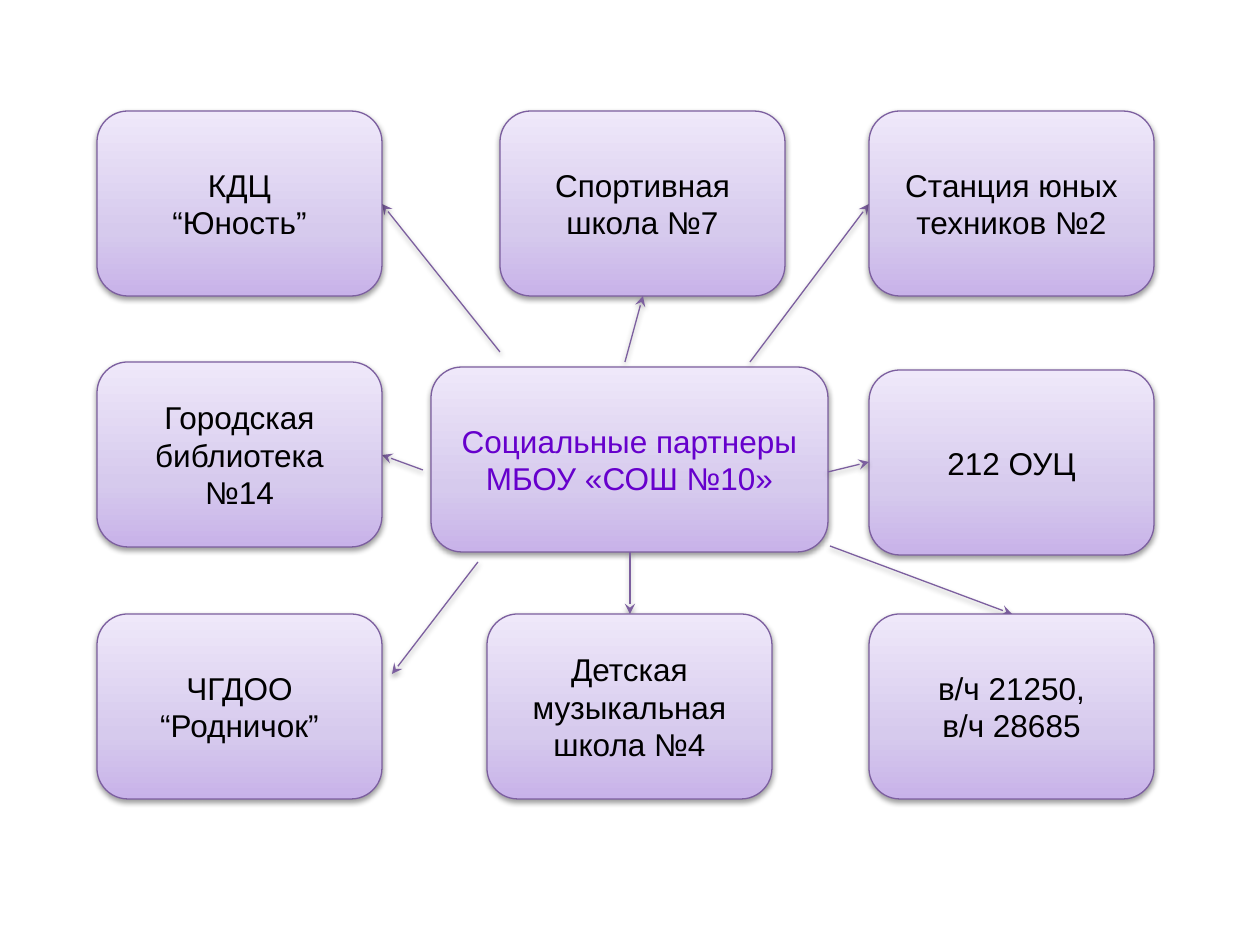
from lxml.etree import SubElement
from pptx import Presentation
from pptx.dml.color import RGBColor
from pptx.enum.shapes import MSO_CONNECTOR, MSO_SHAPE
from pptx.enum.text import MSO_ANCHOR, PP_ALIGN
from pptx.oxml.ns import qn
from pptx.util import Pt

PX = 914400 // 126
BOX_WIDTH, BOX_HEIGHT = 285, 185
LEFT, RIGHT = 97, 869
TOP, BOTTOM = 111, 614
OUTLINE = "7C5F9F"
GRADIENT = [(0, "C8B2E9"), (35, "D6CAED"), (100, "EFE8FA")]

CENTER = (431, 367, 397, ["Социальные партнеры", "МБОУ «СОШ №10»"])
PARTNERS = [
    (LEFT, BOTTOM, ["ЧГДОО “Родничок”"]),
    (LEFT, 362, ["Городская библиотека №14"]),
    (LEFT, TOP, ["КДЦ", "“Юность”"]),
    (487, BOTTOM, ["Детская музыкальная школа №4"]),
    (RIGHT, BOTTOM, ["в/ч 21250,", "в/ч 28685"]),
    (RIGHT, 370, ["212 ОУЦ"]),
    (500, TOP, ["Спортивная школа №7"]),
    (RIGHT, TOP, ["Станция юных техников №2"]),
]
ARROWS_BEHIND = [
    (500, 352, 382, 204),
    (830, 546, 1012, 614),
    (478, 562, 392, 674),
    (630, 552, 630, 614),
    (750, 362, 869, 204),
    (423, 470, 382, 455),
]
ARROWS_IN_FRONT = [(625, 362, 643, 296), (828, 472, 869, 462)]


def color(value):
    return RGBColor.from_string(value)


def add_shadow(properties):
    effects = SubElement(properties, qn("a:effectLst"))
    shadow = SubElement(effects, qn("a:outerShdw"), blurRad="40000", dist="20000",
                        dir="5400000", rotWithShape="0")
    black = SubElement(shadow, qn("a:srgbClr"), val="000000")
    SubElement(black, qn("a:alpha"), val="38000")


def set_line(line):
    line.color.rgb = color(OUTLINE)
    line.width = Pt(0.75)


def fill_gradient(shape):
    shape.fill.gradient()
    shape.fill.gradient_angle = 90
    stops = shape._element.spPr.find(".//" + qn("a:gsLst"))
    for stop in list(stops):
        stops.remove(stop)
    for position, value in GRADIENT:
        stop = SubElement(stops, qn("a:gs"), pos=str(position * 1000))
        SubElement(stop, qn("a:srgbClr"), val=value)


def add_box(slide, kind, left, top, width, lines, text_color, inset):
    shape = slide.shapes.add_shape(kind, left * PX, top * PX, width * PX, BOX_HEIGHT * PX)
    fill_gradient(shape)
    set_line(shape.line)
    add_shadow(shape._element.spPr)
    frame = shape.text_frame
    frame.word_wrap = True
    frame.vertical_anchor = MSO_ANCHOR.MIDDLE
    frame.margin_top = frame.margin_bottom = Pt(inset)
    frame.text = "\n".join(lines)
    for paragraph in frame.paragraphs:
        paragraph.alignment = PP_ALIGN.CENTER
        for run in paragraph.runs:
            run.font.name = "Arial"
            run.font.size = Pt(18)
            run.font.color.rgb = color(text_color)


def add_arrows(slide, arrows):
    for ends in arrows:
        arrow = slide.shapes.add_connector(MSO_CONNECTOR.STRAIGHT, *(end * PX for end in ends))
        set_line(arrow.line)
        SubElement(arrow.line._get_or_add_ln(), qn("a:tailEnd"), type="stealth")
        add_shadow(arrow._element.spPr)


def main():
    presentation = Presentation()
    presentation.slide_width, presentation.slide_height = 1260 * PX, 945 * PX
    slide = presentation.slides.add_slide(presentation.slide_layouts[6])
    left, top, width, lines = CENTER
    add_box(slide, MSO_SHAPE.FLOWCHART_ALTERNATE_PROCESS, left, top, width, lines, "6600CC", 3.6)
    add_arrows(slide, ARROWS_BEHIND)
    for left, top, lines in PARTNERS:
        add_box(slide, MSO_SHAPE.ROUNDED_RECTANGLE, left, top, BOX_WIDTH, lines, "000000", 7.2)
    add_arrows(slide, ARROWS_IN_FRONT)
    presentation.save("out.pptx")


if __name__ == "__main__":
    main()
